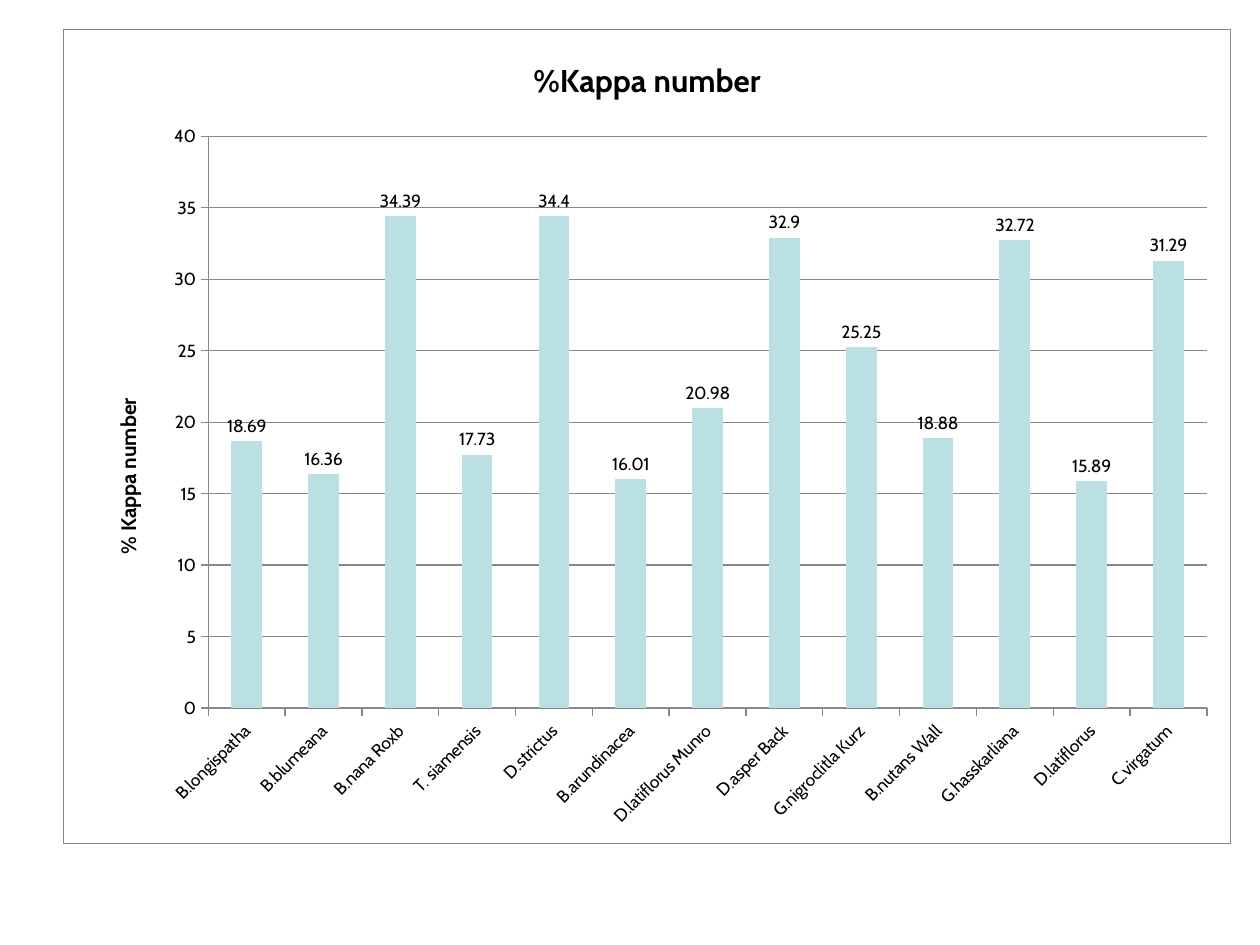
from lxml import etree
from pptx import Presentation
from pptx.chart.data import CategoryChartData
from pptx.dml.color import RGBColor
from pptx.enum.chart import XL_CHART_TYPE, XL_LABEL_POSITION, XL_TICK_MARK
from pptx.oxml import parse_xml
from pptx.oxml.ns import nsdecls, qn
from pptx.util import Pt

BLACK = RGBColor(0x00, 0x00, 0x00)
GREY = RGBColor(0x88, 0x88, 0x88)
TEAL = RGBColor(0xBB, 0xE0, 0xE3)
SCALE = 914400 / 126

KAPPA = {
    "B.longispatha": 18.69,
    "B.blumeana": 16.36,
    "B.nana Roxb": 34.39,
    "T. siamensis": 17.73,
    "D.strictus": 34.4,
    "B.arundinacea": 16.01,
    "D.latiflorus Munro": 20.98,
    "D.asper Back": 32.9,
    "G.nigroclitla Kurz": 25.25,
    "B.nutans Wall": 18.88,
    "G.hasskarliana": 32.72,
    "D.latiflorus": 15.89,
    "C.virgatum": 31.29,
}


def px(n):
    return round(n * SCALE)


class Deck:
    font = "Cabin"

    def __init__(self, width, height):
        self.prs = Presentation()
        self.prs.slide_width, self.prs.slide_height = px(width), px(height)
        self.slide = self.prs.slides.add_slide(self.prs.slide_layouts[6])

    def style(self, font, size, bold=False):
        font.name, font.size, font.bold = self.font, Pt(size), bold
        font.color.rgb = BLACK

    def title(self, owner, text, size):
        """Give a chart or an axis a bold title."""
        frame = (owner.chart_title if hasattr(owner, "chart_title")
                 else owner.axis_title).text_frame
        frame.text = text
        self.style(frame.paragraphs[0].font, size, True)

    def border(self, chart):
        """Outline the whole chart; the frame must follow c:chart."""
        frame = parse_xml(
            f'<c:spPr {nsdecls("c", "a")}><a:noFill/><a:ln w="{Pt(0.75)}">'
            f'<a:solidFill><a:srgbClr val="{GREY}"/></a:solidFill>'
            '</a:ln></c:spPr>')
        chart.element.find(qn("c:chart")).addnext(frame)

    def place(self, chart, **shares):
        """Fix the inner plot area as shares of the chart's size."""
        plot = chart.element.find(qn("c:chart")).find(qn("c:plotArea"))
        for old in plot.findall(qn("c:layout")):
            plot.remove(old)
        layout = etree.Element(qn("c:layout"))
        manual = etree.SubElement(layout, qn("c:manualLayout"))
        modes = {"layoutTarget": "inner", "xMode": "edge", "yMode": "edge"}
        for tag, val in {**modes, **shares}.items():
            etree.SubElement(manual, qn(f"c:{tag}")).set("val", str(val))
        plot.insert(0, layout)

    def columns(self, box, name, points):
        data = CategoryChartData()
        data.categories = list(points)
        data.add_series(name, list(points.values()))
        chart = self.slide.shapes.add_chart(
            XL_CHART_TYPE.COLUMN_CLUSTERED, *map(px, box), data).chart
        self.style(chart.font, 10)
        chart.has_legend = False
        self.title(chart, name, 18)
        self.border(chart)

        plot = chart.plots[0]
        plot.gap_width = 150
        plot.vary_by_categories = False
        fill = plot.series[0].format.fill
        fill.solid()
        fill.fore_color.rgb = TEAL
        plot.has_data_labels = True
        labels = plot.data_labels
        labels.show_value = True
        labels.position = XL_LABEL_POSITION.OUTSIDE_END
        self.style(labels.font, 10)

        for axis in (chart.category_axis, chart.value_axis):
            axis.major_tick_mark = XL_TICK_MARK.OUTSIDE
            axis.minor_tick_mark = XL_TICK_MARK.NONE
            axis.format.line.color.rgb = GREY
            axis.format.line.width = Pt(0.75)
            self.style(axis.tick_labels.font, 10)
        return chart


def main():
    deck = Deck(1260, 945)
    chart = deck.columns((63, 29, 1168, 815), "%Kappa number", KAPPA)
    deck.place(chart, x=0.124, y=0.131, w=0.856, h=0.703)

    slant = chart.category_axis.tick_labels.font
    slant._element.getparent().getparent().getparent().find(
        qn("a:bodyPr")).set("rot", str(-45 * 60000))

    axis = chart.value_axis
    axis.minimum_scale, axis.maximum_scale, axis.major_unit = 0, 40, 5
    axis.has_major_gridlines = True
    axis.major_gridlines.format.line.color.rgb = GREY
    axis.major_gridlines.format.line.width = Pt(0.75)
    deck.title(axis, "% Kappa number", 12)
    deck.prs.save("out.pptx")


if __name__ == "__main__":
    main()
